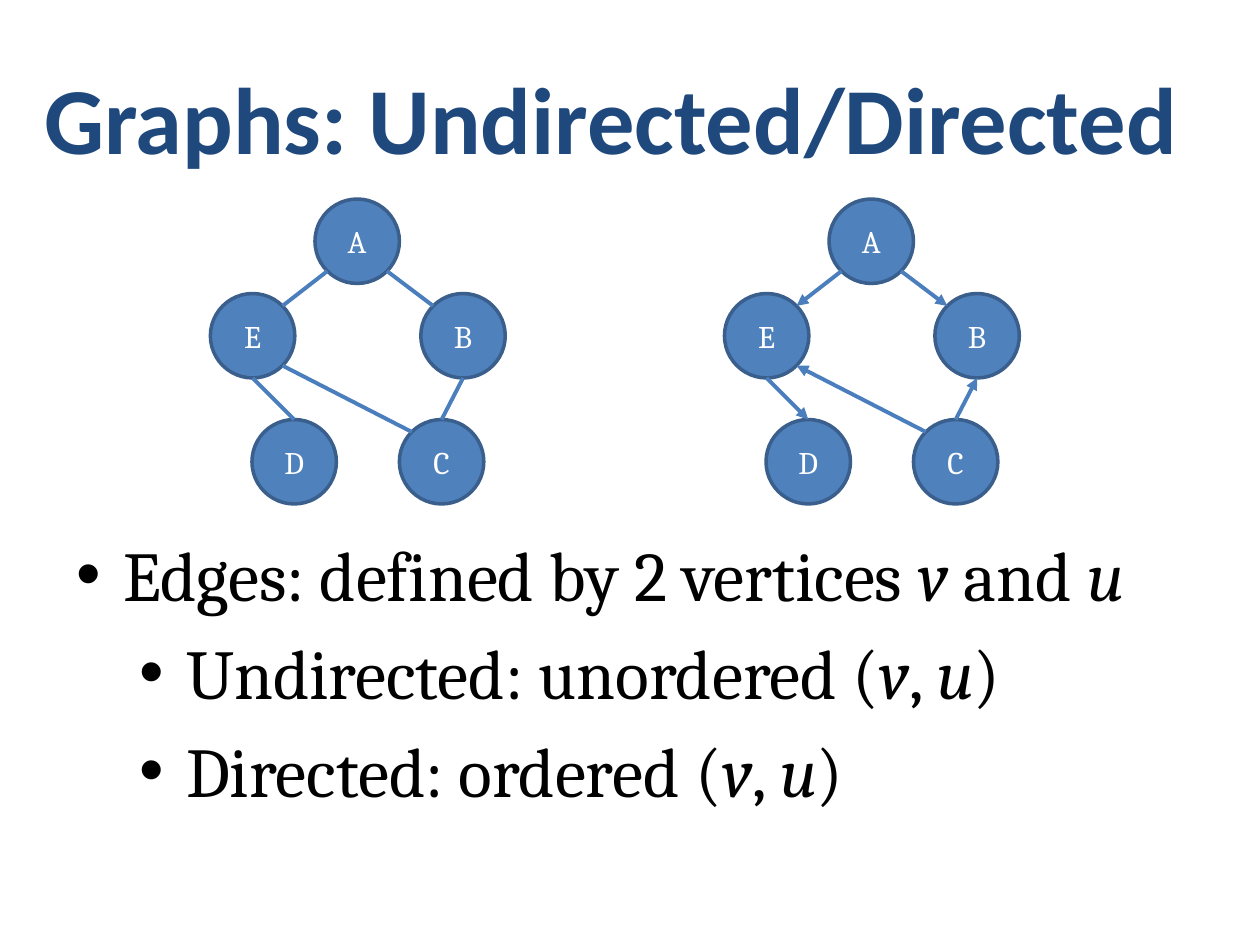
import math

import lxml.etree
import pptx
import pptx.dml.color
import pptx.enum.shapes
import pptx.enum.text
import pptx.oxml.ns
import pptx.util
from pptx.util import Inches


def color(hex_string):
    return pptx.dml.color.RGBColor.from_string(hex_string)


def add_element(parent, tag, **attributes):
    return lxml.etree.SubElement(parent, pptx.oxml.ns.qn(tag), attributes)


presentation = pptx.Presentation()
presentation.slide_width = Inches(10)
presentation.slide_height = Inches(7.5)
slide = presentation.slides.add_slide(presentation.slide_layouts[5])

title = slide.shapes.title
title.left, title.top = Inches(0.25), Inches(0.3)
title.width, title.height = Inches(9.5), Inches(1.25)
title.text_frame.text = "Graphs: Undirected/Directed"
title.text_frame.word_wrap = True
title.text_frame.auto_size = pptx.enum.text.MSO_AUTO_SIZE.NONE
title.text_frame.vertical_anchor = pptx.enum.text.MSO_ANCHOR.MIDDLE
paragraph = title.text_frame.paragraphs[0]
paragraph.alignment = pptx.enum.text.PP_ALIGN.LEFT
font = paragraph.runs[0].font
font.name, font.size, font.bold = "Calibri", pptx.util.Pt(54), True
font.color.rgb = color("1F497D")

diameter = 0.67
radius = diameter / 2
vertices = {
    "A": (0.83, 1.58),
    "B": (1.67, 2.33),
    "C": (1.5, 3.33),
    "D": (0.33, 3.33),
    "E": (0, 2.33),
}
angles = {
    "top": -90, "bottom": 90, "top left": -135,
    "top right": -45, "bottom left": 135, "bottom right": 45,
}
edges = [
    ("E", "top right", "A", "bottom left"),
    ("B", "top left", "A", "bottom right"),
    ("B", "bottom", "C", "top"),
    ("E", "bottom right", "C", "top left"),
    ("D", "top", "E", "bottom"),
]

for graph_left, directed in [(1.67, False), (5.75, True)]:
    for name, (left, top) in vertices.items():
        shape = slide.shapes.add_shape(
            pptx.enum.shapes.MSO_SHAPE.OVAL,
            Inches(graph_left + left), Inches(top), Inches(diameter), Inches(diameter),
        )
        shape.shadow.inherit = False
        shape.fill.solid()
        shape.fill.fore_color.rgb = color("4F81BD")
        shape.line.color.rgb = color("3A5F8C")
        shape.line.width = pptx.util.Pt(2)
        shape.text_frame.text = name
        shape.text_frame.vertical_anchor = pptx.enum.text.MSO_ANCHOR.MIDDLE
        paragraph = shape.text_frame.paragraphs[0]
        paragraph.alignment = pptx.enum.text.PP_ALIGN.CENTER
        font = paragraph.runs[0].font
        font.name, font.size = "Cambria", pptx.util.Pt(18)
        font.color.rgb = color("FFFFFF")

    for target, target_side, source, source_side in edges:
        ends = []
        for name, side in [(target, target_side), (source, source_side)]:
            left, top = vertices[name]
            angle = math.radians(angles[side])
            ends.append(Inches(graph_left + left + radius * (1 + math.cos(angle))))
            ends.append(Inches(top + radius * (1 + math.sin(angle))))
        connector = slide.shapes.add_connector(
            pptx.enum.shapes.MSO_CONNECTOR.STRAIGHT, *ends
        )
        connector.line.color.rgb = color("4B7EBC")
        connector.line.width = pptx.util.Pt(2.25)
        if directed:
            add_element(connector.line._get_or_add_ln(), "a:headEnd", type="triangle")
        add_element(connector._element.spPr, "a:effectLst")

body = slide.shapes.add_textbox(Inches(0.5), Inches(4.17), Inches(9), Inches(2.53))
body.text_frame.word_wrap = True
bullets = [
    (0, ["Edges: defined by 2 vertices ", "v ", "and ", "u"]),
    (1, ["Undirected: unordered (", "v", ", ", "u", ")"]),
    (1, ["Directed: ordered (", "v", ", ", "u", ")"]),
]
for index, (level, pieces) in enumerate(bullets):
    paragraph = body.text_frame.add_paragraph() if index else body.text_frame.paragraphs[0]
    paragraph.level = level
    properties = paragraph._p.get_or_add_pPr()
    properties.set("marL", str(Inches(0.38 + 0.5 * level)))
    properties.set("indent", str(Inches(-0.37)))
    bullet_color = add_element(properties, "a:buClr")
    add_element(bullet_color, "a:srgbClr", val="000000")
    add_element(properties, "a:buFont", typeface="Arial")
    add_element(properties, "a:buChar", char="•")
    paragraph.space_before = pptx.util.Pt(8 if index else 0)
    for position, piece in enumerate(pieces):
        run = paragraph.add_run()
        run.text = piece
        run.font.name, run.font.size = "Cambria", pptx.util.Pt(40)
        run.font.italic = position % 2 == 1
        run.font.color.rgb = color("000000")

presentation.save("out.pptx")
